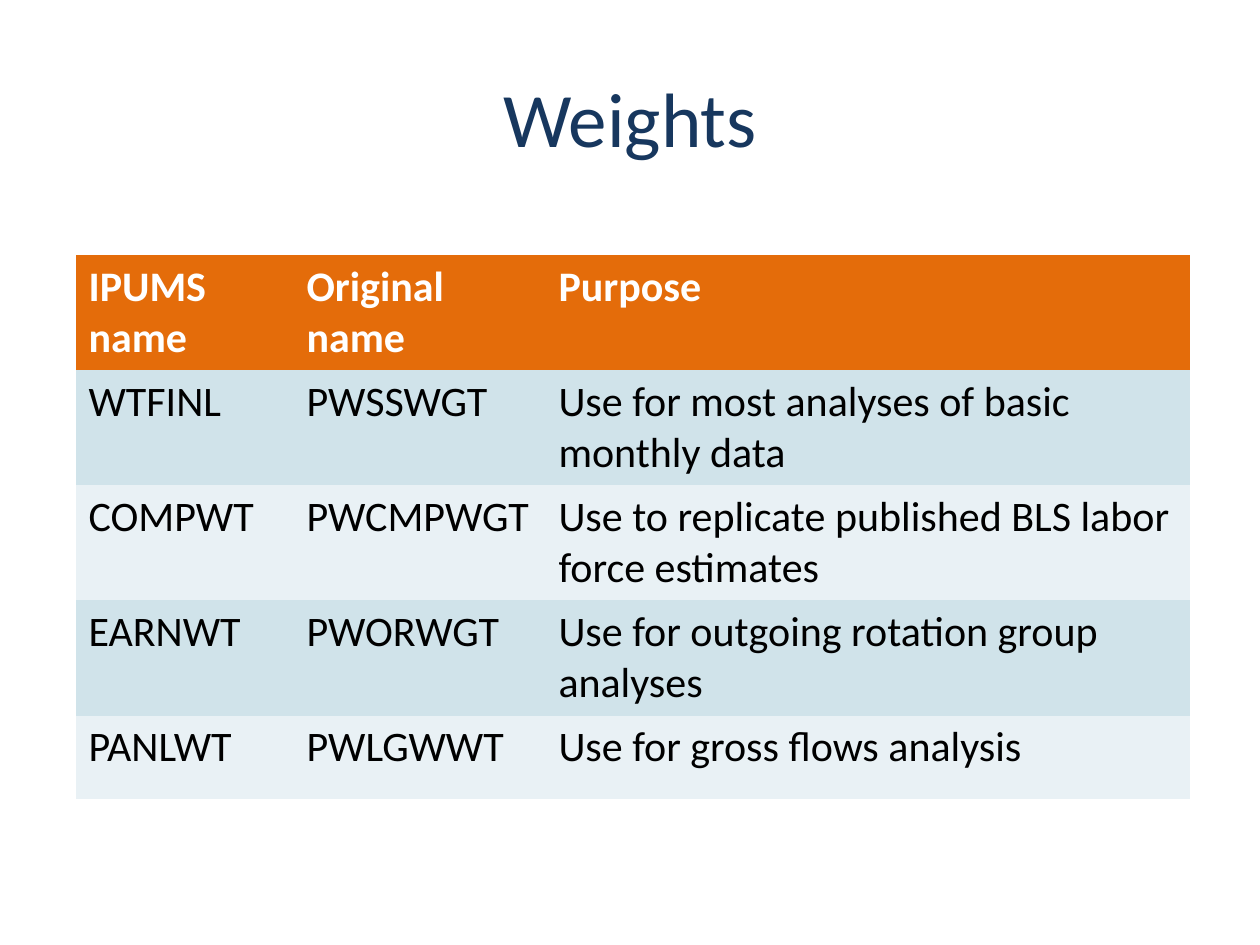
import pptx
import pptx.dml.color
import pptx.enum.text
import pptx.util

PX = 914400 // 126
FONT = "Calibri"
NO_STYLE = "{2D5ABB26-0587-4C30-8999-92F81FD0307C}"
NAVY, ORANGE, WHITE, BLACK = "17375E", "E46C0A", "FFFFFF", "000000"
BANDS = ["D0E3EA", "E9F1F5"]

TITLE_BOX = (63, 38, 1134, 157)
TABLE_BOX = (76, 255, 1114, 543)
COLUMN_WIDTHS = [218, 252, 644]
ROW_HEIGHTS = [115, 115, 115, 115, 83]
ROWS = [
    ["IPUMS name", "Original name", "Purpose"],
    ["WTFINL", "PWSSWGT", "Use for most analyses of basic monthly data"],
    ["COMPWT", "PWCMPWGT", "Use to replicate published BLS labor force estimates"],
    ["EARNWT", "PWORWGT", "Use for outgoing rotation group analyses"],
    ["PANLWT", "PWLGWWT", "Use for gross flows analysis"],
]


def px(n):
    return pptx.util.Emu(n * PX)


def rgb(value):
    return pptx.dml.color.RGBColor.from_string(value)


def write(tf, text, size=24, color=BLACK, bold=False, align="LEFT"):
    p = tf.paragraphs[0]
    p.alignment = getattr(pptx.enum.text.PP_ALIGN, align)
    r = p.add_run()
    r.text = text
    r.font.name = FONT
    r.font.size = pptx.util.Pt(size)
    r.font.bold = bold
    r.font.color.rgb = rgb(color)


def place_title(slide, box, text):
    sp = slide.shapes.title
    sp.left, sp.top, sp.width, sp.height = map(px, box)
    tf = sp.text_frame
    tf.word_wrap = True
    tf.vertical_anchor = pptx.enum.text.MSO_ANCHOR.MIDDLE
    write(tf, text, size=44, color=NAVY, align="CENTER")


def add_weights_table(slide, box, rows):
    frame = slide.shapes.add_table(len(rows), len(rows[0]), *map(px, box))
    table = frame.table
    table.horz_banding = False
    table._tbl.tblPr[0].text = NO_STYLE
    for column, width in zip(table.columns, COLUMN_WIDTHS):
        column.width = px(width)
    for i, (row, height) in enumerate(zip(rows, ROW_HEIGHTS)):
        table.rows[i].height = px(height)
        header = i == 0
        for j, text in enumerate(row):
            cell = table.cell(i, j)
            cell.fill.solid()
            cell.fill.fore_color.rgb = rgb(ORANGE if header else BANDS[(i - 1) % 2])
            write(cell.text_frame, text, color=WHITE if header else BLACK, bold=header)


def main():
    prs = pptx.Presentation()
    prs.slide_width, prs.slide_height = px(1260), px(945)
    slide = prs.slides.add_slide(prs.slide_layouts[5])
    place_title(slide, TITLE_BOX, "Weights")
    add_weights_table(slide, TABLE_BOX, ROWS)
    prs.save("out.pptx")


if __name__ == "__main__":
    main()
